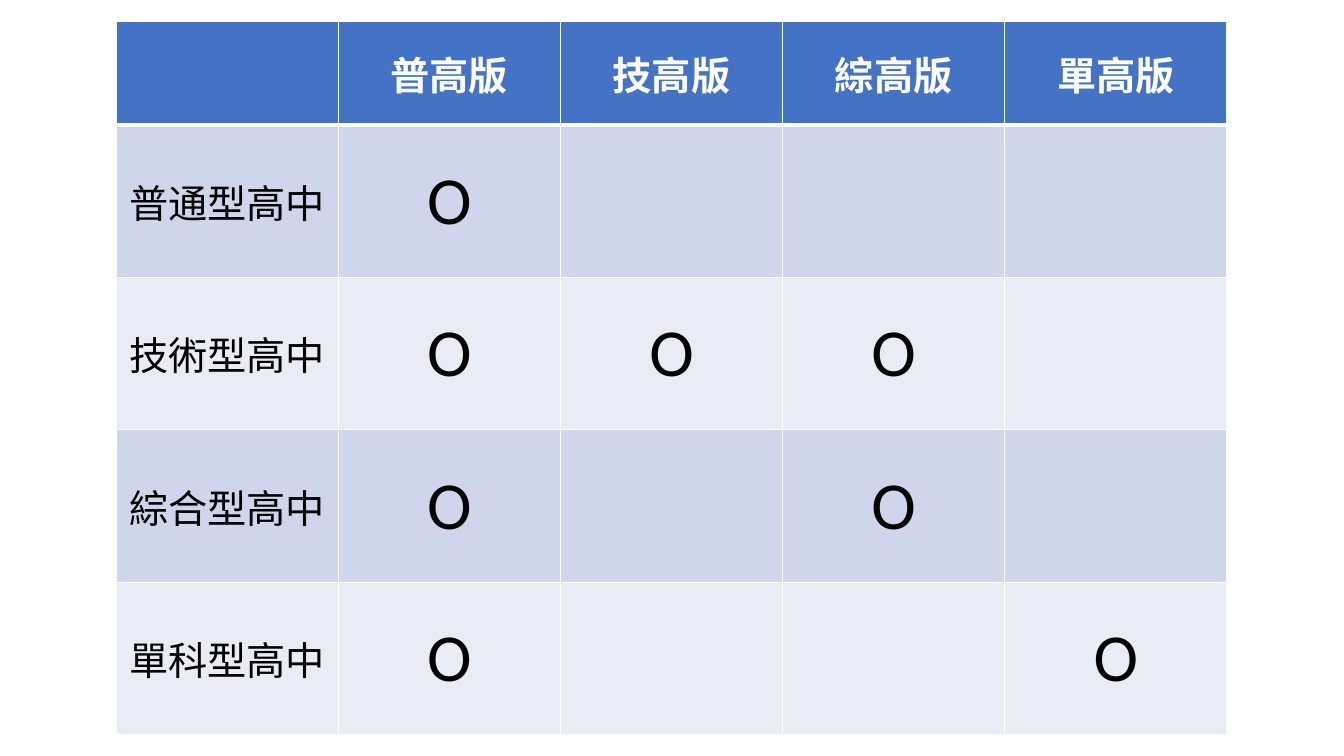
from dataclasses import dataclass

import pptx
import pptx.dml.color
import pptx.enum.text
import pptx.oxml
import pptx.oxml.ns
import pptx.table
import pptx.util

Inches = pptx.util.Inches
Pt = pptx.util.Pt

FONT = "Calibri"
WHITE, BLACK = "FFFFFF", "000000"
HEADER_FILL = "4472C4"
BAND_FILLS = ("CFD5EA", "E9EBF5")
LEFT, TOP, WIDTH, HEIGHT = 1.15, 0.21, 11.02, 7.08
HEADER_HEIGHT = 1.03


@dataclass(frozen=True)
class CellStyle:
    fill: str
    color: str = BLACK
    size: int = 28
    bold: bool = False
    top_line: float = 1
    bottom_line: float = 1


@dataclass(frozen=True)
class SchoolType:
    name: str
    versions: tuple[str, ...]


# Curriculum versions and the school types that may use them
VERSIONS = ("普高版", "技高版", "綜高版", "單高版")
SCHOOL_TYPES = (
    SchoolType("普通型高中", ("普高版",)),
    SchoolType("技術型高中", ("普高版", "技高版", "綜高版")),
    SchoolType("綜合型高中", ("普高版", "綜高版")),
    SchoolType("單科型高中", ("普高版", "單高版")),
)


def rgb(color: str) -> pptx.dml.color.RGBColor:
    return pptx.dml.color.RGBColor.from_string(color)


def set_borders(cell: pptx.table._Cell, style: CellStyle) -> None:
    properties = cell._tc.get_or_add_tcPr()
    widths = {"lnL": 1, "lnR": 1, "lnT": style.top_line, "lnB": style.bottom_line}
    # Border elements come before the fill
    for index, (tag, width) in enumerate(widths.items()):
        line = pptx.oxml.parse_xml(
            f'<a:{tag} {pptx.oxml.ns.nsdecls("a")} w="{Pt(width)}"><a:solidFill>'
            f'<a:srgbClr val="{WHITE}"/></a:solidFill></a:{tag}>'
        )
        properties.insert(index, line)


def fill_cell(cell: pptx.table._Cell, text: str, style: CellStyle) -> None:
    cell.fill.solid()
    cell.fill.fore_color.rgb = rgb(style.fill)
    set_borders(cell, style)
    cell.vertical_anchor = pptx.enum.text.MSO_ANCHOR.MIDDLE
    if not text:
        return
    cell.text = text
    paragraph = cell.text_frame.paragraphs[0]
    paragraph.alignment = pptx.enum.text.PP_ALIGN.CENTER
    paragraph.font.name = FONT
    paragraph.font.size = Pt(style.size)
    paragraph.font.bold = style.bold
    paragraph.font.color.rgb = rgb(style.color)


def main() -> None:
    presentation = pptx.Presentation()
    presentation.slide_width = Inches(13.33)
    presentation.slide_height = Inches(7.5)
    slide = presentation.slides.add_slide(presentation.slide_layouts[6])

    # Table grid
    row_count, column_count = len(SCHOOL_TYPES) + 1, len(VERSIONS) + 1
    table = slide.shapes.add_table(
        row_count, column_count, Inches(LEFT), Inches(TOP), Inches(WIDTH), Inches(HEIGHT)
    ).table
    for column in table.columns:
        column.width = Inches(WIDTH / column_count)
    for row in table.rows:
        row.height = Inches((HEIGHT - HEADER_HEIGHT) / len(SCHOOL_TYPES))
    table.rows[0].height = Inches(HEADER_HEIGHT)

    # Header row
    header = CellStyle(HEADER_FILL, WHITE, bold=True, bottom_line=3)
    for column_index, text in enumerate(("", *VERSIONS)):
        fill_cell(table.cell(0, column_index), text, header)

    # One banded row per school type
    for row_index, school in enumerate(SCHOOL_TYPES, start=1):
        fill = BAND_FILLS[(row_index - 1) % 2]
        top_line = 3 if row_index == 1 else 1
        fill_cell(table.cell(row_index, 0), school.name, CellStyle(fill, top_line=top_line))
        mark = CellStyle(fill, size=48, top_line=top_line)
        for column_index, version in enumerate(VERSIONS, start=1):
            text = "O" if version in school.versions else ""
            fill_cell(table.cell(row_index, column_index), text, mark)

    presentation.save("out.pptx")


if __name__ == "__main__":
    main()
